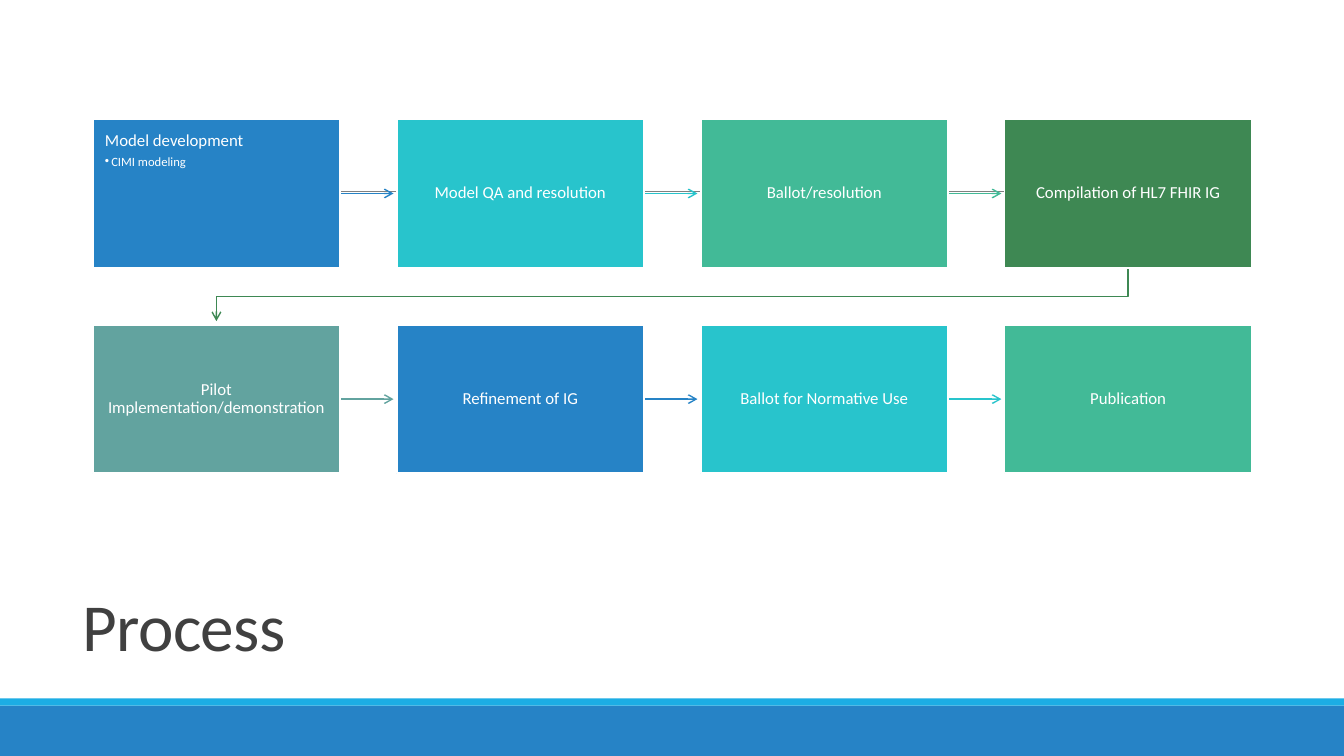
from lxml import etree
from pptx import Presentation
from pptx.dml.color import RGBColor
from pptx.enum.shapes import MSO_CONNECTOR as Link, MSO_SHAPE as Shape
from pptx.enum.text import MSO_ANCHOR as Anchor, MSO_AUTO_SIZE as Fit, PP_ALIGN as Align
from pptx.oxml.ns import qn
from pptx.util import Pt

WHITE = RGBColor(0xFF, 0xFF, 0xFF)
DARK = RGBColor(0x40, 0x40, 0x40)
GREY = RGBColor(0x80, 0x80, 0x80)
SKY = RGBColor(0x1C, 0xAD, 0xE4)
BLUE = RGBColor(0x26, 0x83, 0xC6)
AQUA = RGBColor(0x28, 0xC4, 0xCC)
MINT = RGBColor(0x42, 0xBA, 0x97)
GREEN = RGBColor(0x3E, 0x88, 0x53)
SAGE = RGBColor(0x62, 0xA3, 0x9F)

FONT = "Calibri"
COLS = 4
LEFT, TOP = 66.3, 85.2
WIDE, HIGH = 176.6, 106
STEP_X, STEP_Y = 217.1, 146.9
REACH = 38.2  # arrow length

STEPS = [
    ("Model development", BLUE),
    ("Model QA and resolution", AQUA),
    ("Ballot/resolution", MINT),
    ("Compilation of HL7 FHIR IG", GREEN),
    ("Pilot Implementation/demonstration", SAGE),
    ("Refinement of IG", BLUE),
    ("Ballot for Normative Use", AQUA),
    ("Publication", MINT),
]


def add_rect(slide, x, y, w, h, color):
    rect = slide.shapes.add_shape(Shape.RECTANGLE, Pt(x), Pt(y), Pt(w), Pt(h))
    rect.shadow.inherit = False
    rect.fill.solid()
    rect.fill.fore_color.rgb = color
    rect.line.fill.background()
    return rect


def add_line(slide, x1, y1, x2, y2, color, width):
    line = slide.shapes.add_connector(Link.STRAIGHT, Pt(x1), Pt(y1), Pt(x2), Pt(y2))
    line.line.color.rgb = color
    line.line.width = Pt(width)
    etree.SubElement(line._element.spPr, qn("a:effectLst"))
    return line


def add_tip(shape):
    """Put an open arrowhead at the end of a line."""
    ln = shape.line._get_or_add_ln()
    etree.SubElement(ln, qn("a:tailEnd"), type="arrow")


def add_elbow(slide, points, color):
    first, *rest = [(Pt(x), Pt(y)) for x, y in points]
    pen = slide.shapes.build_freeform(*first)
    pen.add_line_segments(rest, close=False)
    elbow = pen.convert_to_shape()
    elbow.shadow.inherit = False
    elbow.fill.background()
    elbow.line.color.rgb = color
    elbow.line.width = Pt(1)
    add_tip(elbow)


def style(para, size, after, align):
    para.alignment = align
    para.line_spacing = 0.9
    para.space_after = Pt(after)
    para.font.name = FONT
    para.font.size = Pt(size)
    para.font.color.rgb = WHITE


def add_step(slide, x, y, text, color, bullet=None):
    box = add_rect(slide, x, y, WIDE, HIGH, color)
    box.line.color.rgb = WHITE
    box.line.width = Pt(1.25)
    frame = box.text_frame
    frame.word_wrap = True
    frame.margin_left = frame.margin_right = Pt(8.7)
    frame.margin_top = frame.margin_bottom = Pt(9.1)
    frame.vertical_anchor = Anchor.TOP if bullet else Anchor.MIDDLE
    head = frame.paragraphs[0]
    head.text = text
    style(head, 12, 4.2, Align.LEFT if bullet else Align.CENTER)
    if bullet:
        item = frame.add_paragraph()
        item.text = bullet
        item.level = 1
        props = item._p.get_or_add_pPr()
        props.set("marL", str(Pt(4.5)))
        props.set("indent", str(-Pt(4.5)))
        etree.SubElement(props, qn("a:buChar"), char="•")
        style(item, 9, 1.35, Align.LEFT)


def add_title(slide, text):
    title = slide.shapes.title
    title.left, title.top = Pt(52), Pt(392.4)
    title.width, title.height = Pt(607.7), Pt(86.4)
    frame = title.text_frame
    frame.word_wrap = True
    frame.auto_size = Fit.NONE
    frame.vertical_anchor = Anchor.BOTTOM
    para = frame.paragraphs[0]
    para.text = text
    para.runs[0]._r.get_or_add_rPr().set("spc", "-50")
    para.alignment = Align.LEFT
    para.line_spacing = 0.85
    para.font.name = FONT
    para.font.size = Pt(48)
    para.font.color.rgb = DARK


def add_flow(slide):
    for i, (text, color) in enumerate(STEPS):
        row, col = divmod(i, COLS)
        x, y = LEFT + col * STEP_X, TOP + row * STEP_Y
        if col < COLS - 1:
            mid = y + HIGH / 2
            add_tip(add_line(slide, x + WIDE, mid, x + WIDE + REACH, mid, color, 1))
        elif i < len(STEPS) - 1:
            start, end = x + WIDE / 2, LEFT + WIDE / 2
            low = y + HIGH
            turn = (low + y + STEP_Y) / 2
            points = [(start, low), (start, turn), (end, turn), (end, low + REACH)]
            add_elbow(slide, points, color)
        add_step(slide, x, y, text, color, None if i else "CIMI modeling")


def main():
    deck = Presentation()
    deck.slide_width, deck.slide_height = Pt(960), Pt(540)
    slide = deck.slides.add_slide(deck.slide_layouts[5])
    add_rect(slide, 0, 504, 960, 36, BLUE)
    add_rect(slide, 0, 498.8, 960, 5.2, SKY)
    add_line(slide, 94.3, 136.8, 879.1, 136.8, GREY, 0.5)
    add_title(slide, "Process")
    add_flow(slide)
    deck.save("out.pptx")


if __name__ == "__main__":
    main()
